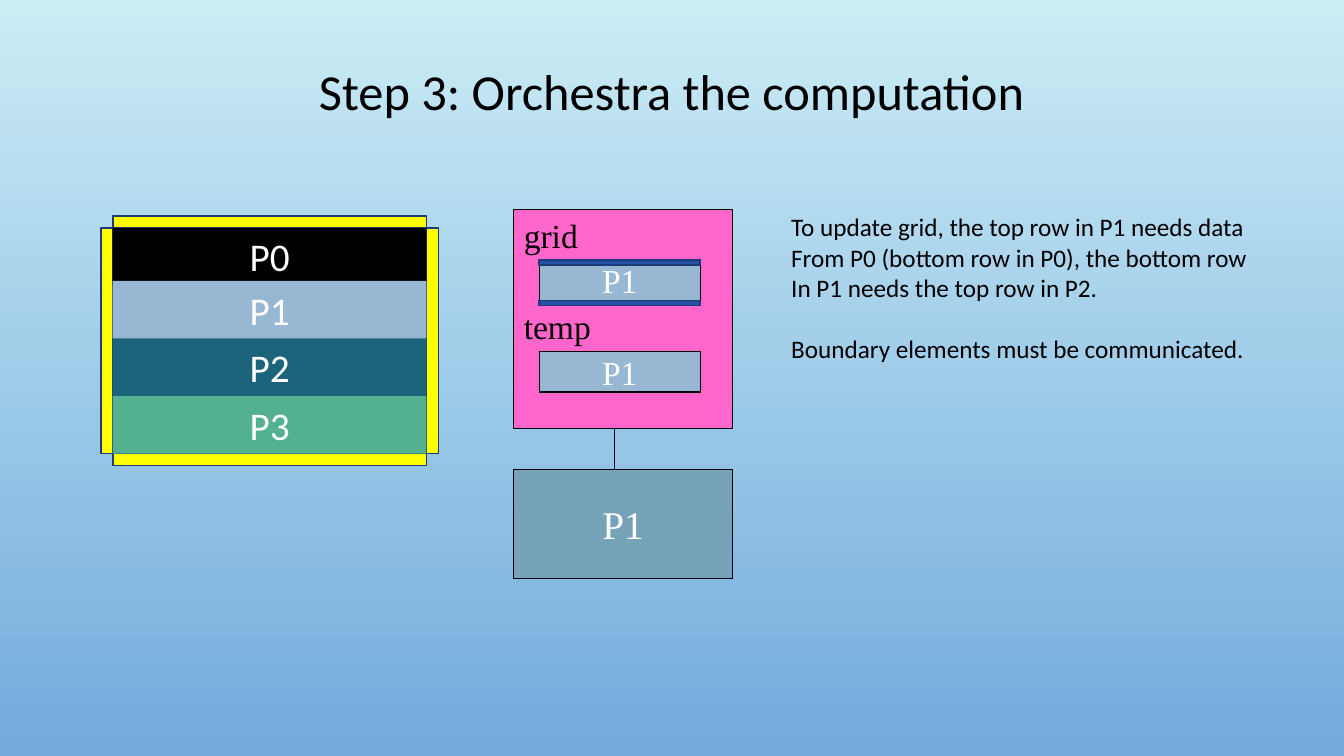
import pptx
import pptx.dml.color
import pptx.enum.shapes
import pptx.enum.text
import pptx.util
from lxml import etree

Cm = pptx.util.Cm
Pt = pptx.util.Pt
ANCHOR = pptx.enum.text.MSO_ANCHOR
ALIGN = pptx.enum.text.PP_ALIGN
AUTO = pptx.enum.text.MSO_AUTO_SIZE
SHAPE = pptx.enum.shapes.MSO_SHAPE
SERIF = "Times New Roman"
SANS = "Calibri"


def color(value):
    return pptx.dml.color.RGBColor.from_string(value)


def apply(target, formats):
    for name, value in formats.items():
        setattr(target, name, value)


def write(sp, lines, size, font, ink, align, **frame):
    tf = sp.text_frame
    apply(tf, frame)
    for i, line in enumerate(lines):
        p = tf.paragraphs[0] if i == 0 else tf.add_paragraph()
        p.alignment = align
        r = p.add_run()
        r.text = line
        apply(r.font, {"size": Pt(size), "name": font})
        r.font.color.rgb = color(ink)
    return tf


def add_rect(s, x, y, w, h, fill, line=None, weight=0.75):
    sp = s.shapes.add_shape(SHAPE.RECTANGLE, Cm(x), Cm(y), Cm(w), Cm(h))
    sp.shadow.inherit = False
    sp.fill.solid()
    sp.fill.fore_color.rgb = color(fill)
    if line:
        sp.line.color.rgb = color(line)
        sp.line.width = Pt(weight)
    else:
        sp.line.fill.background()
    return sp


def add_text(s, x, y, w, h, lines, size, font, **frame):
    sp = s.shapes.add_textbox(Cm(x), Cm(y), Cm(w), Cm(h))
    return write(sp, lines, size, font, "000000", ALIGN.LEFT,
                 word_wrap=False, auto_size=AUTO.SHAPE_TO_FIT_TEXT, **frame)


def add_background(s):
    fill = s.background.fill
    fill.gradient()
    fill.gradient_angle = 270
    for stop, value, position in zip(fill.gradient_stops, ("CBECF5", "73ABDD"), (0, 1)):
        stop.color.rgb = color(value)
        stop.position = position


def add_title(s, x, y, w, h, text):
    sp = s.shapes.title
    apply(sp, {"left": Cm(x), "top": Cm(y), "width": Cm(w), "height": Cm(h)})
    tf = write(sp, [text], 36, SANS, "000000", ALIGN.CENTER,
               vertical_anchor=ANCHOR.MIDDLE, auto_size=AUTO.NONE)
    tf.paragraphs[0].line_spacing = 0.9


def add_partition(s, x, y, w, h):
    edge, band = 0.3, 1.45
    inner_w, inner_h = w - 2 * edge, h - 2 * edge
    top, bottom = y + edge, y + h - edge
    borders = [
        (x + edge, bottom, inner_w, edge),
        (x + edge, y, inner_w, edge),
        (x, top, edge, inner_h),
        (x + w - edge, top, edge, inner_h),
    ]
    for border in borders:
        add_rect(s, *border, "FFFF00", "1D3A79", 1.25)
    fills = ["000000", "98B7D3", "1C647B", "53B18F"]
    for i, fill in enumerate(fills):
        band_y = max(top, bottom - (len(fills) - i) * band)
        sp = add_rect(s, x + edge, band_y, inner_w, band, fill)
        write(sp, [f"P{i}"], 28, SANS, "FFFFFF", ALIGN.CENTER,
              vertical_anchor=ANCHOR.TOP, auto_size=AUTO.SHAPE_TO_FIT_TEXT, word_wrap=True)


def add_process(s, x, y, w, h):
    memory_h, cpu_h = 5.51, 2.74
    label_h, buffer_h, pitch = 1.27, 1.02, 2.31
    inset, buffer_w, halo_h = 0.64, 4.06, 0.13
    centered = {"vertical_anchor": ANCHOR.MIDDLE, "word_wrap": False}

    cpu_y = y + h - cpu_h
    sp = add_rect(s, x, cpu_y, w, cpu_h, "76A3B8", "000000")
    write(sp, ["P1"], 28, SERIF, "FFFFFF", ALIGN.CENTER, **centered)
    add_rect(s, x, y, w, memory_h, "FF66CC", "000000")

    for i, (label, label_w) in enumerate([("grid", 1.88), ("temp", 2.21)]):
        label_y = y + i * pitch
        sp = add_rect(s, x + inset, label_y + label_h, buffer_w, buffer_h, "98B7D3", "000000")
        write(sp, ["P1"], 24, SERIF, "FFFFFF", ALIGN.CENTER, **centered)
        add_text(s, x, label_y, label_w, label_h, [label], 24, SERIF,
                 vertical_anchor=ANCHOR.MIDDLE)

    bus_x = Cm(x + 2.54)
    bus = s.shapes.add_connector(pptx.enum.shapes.MSO_CONNECTOR.STRAIGHT,
                                 bus_x, Cm(y + memory_h), bus_x, Cm(cpu_y))
    bus.line.color.rgb = color("000000")
    bus.line.width = Pt(0.75)
    etree.SubElement(bus.element.spPr, pptx.oxml.ns.qn("a:effectLst"))

    for halo_y in (y + label_h, y + label_h + buffer_h):
        add_rect(s, x + inset, halo_y, buffer_w, halo_h, "274FA4", "1D3A79", 1.25)


def add_explanation(s, x, y, w, h):
    lines = [
        "To update grid, the top row in P1 needs data",
        "From P0 (bottom row in P0), the bottom row",
        "In P1 needs the top row in P2.",
        "Boundary elements must be communicated.",
    ]
    tf = add_text(s, x, y, w, h, lines, 18, SANS)
    tf.paragraphs[-1].space_before = Pt(22)


def main():
    prs = pptx.Presentation()
    apply(prs, {"slide_width": Cm(33.87), "slide_height": Cm(19.05)})
    s = prs.slides.add_slide(prs.slide_layouts[5])
    add_background(s)
    add_title(s, 2.54, 0.81, 28.78, 3.12, "Step 3: Orchestra the computation")
    add_partition(s, 2.54, 5.44, 8.51, 6.29)
    add_process(s, 12.95, 5.28, 5.51, 9.3)
    add_explanation(s, 19.69, 5.21, 12.07, 4.11)
    prs.save("out.pptx")


if __name__ == "__main__":
    main()
